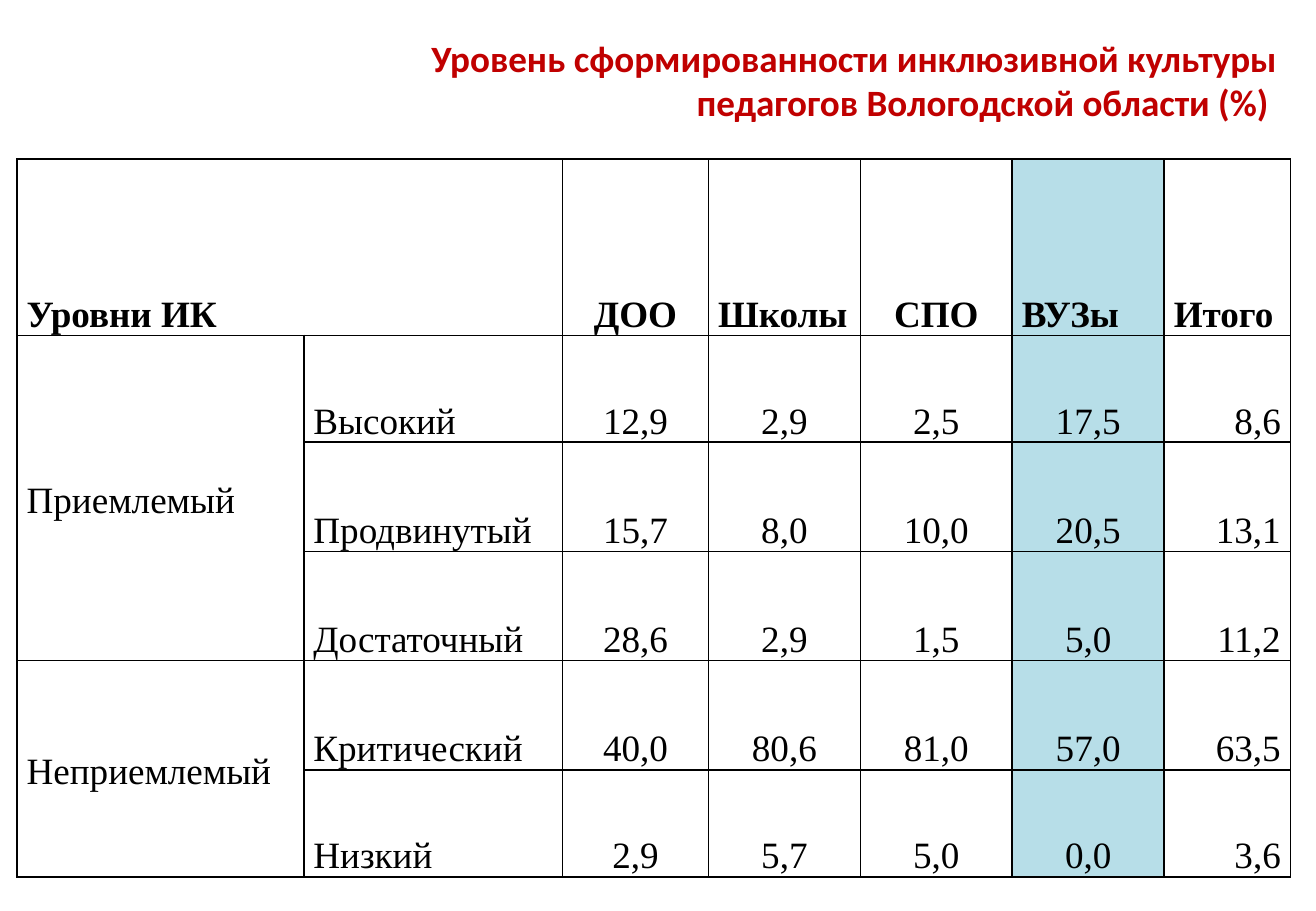
"""Builds a slide with a table of inclusive culture levels among teachers."""
from dataclasses import dataclass

from lxml.etree import SubElement
from pptx import Presentation
from pptx.dml.color import RGBColor
from pptx.enum.text import MSO_ANCHOR as Anchor, MSO_AUTO_SIZE as AutoSize, PP_ALIGN as Align
from pptx.oxml.ns import qn
from pptx.table import Table, _Cell as Cell
from pptx.text.text import TextFrame
from pptx.util import Emu, Pt

EMU_PER_PX = 9144
BLACK, RED, BLUE = "000000", "C00000", "B7DEE8"
BORDER_SIDES = ("a:lnL", "a:lnR", "a:lnT", "a:lnB")


@dataclass(frozen=True)
class Column:
    heading: str
    width: int
    heading_align: Align = Align.LEFT
    body_align: Align = Align.CENTER
    fill: str | None = None


@dataclass(frozen=True)
class Row:
    height: int
    texts: tuple[str, ...]


@dataclass(frozen=True)
class Span:
    row: int
    column: int
    last_row: int
    last_column: int


COLUMNS = (
    Column("Уровни ИК", 236, body_align=Align.LEFT),
    Column("", 213, body_align=Align.LEFT),
    Column("ДОО", 120, Align.CENTER),
    Column("Школы", 125),
    Column("СПО", 125, Align.CENTER),
    Column("ВУЗы", 125, fill=BLUE),
    Column("Итого", 104, body_align=Align.RIGHT),
)
ROWS = (
    Row(145, tuple(column.heading for column in COLUMNS)),
    Row(88, ("Приемлемый", "Высокий", "12,9", "2,9", "2,5", "17,5", "8,6")),
    Row(90, ("", "Продвинутый", "15,7", "8,0", "10,0", "20,5", "13,1")),
    Row(90, ("", "Достаточный", "28,6", "2,9", "1,5", "5,0", "11,2")),
    Row(90, ("Неприемлемый", "Критический", "40,0", "80,6", "81,0", "57,0", "63,5")),
    Row(88, ("", "Низкий", "2,9", "5,7", "5,0", "0,0", "3,6")),
)
SPANS = (Span(0, 0, 0, 1), Span(1, 0, 3, 0), Span(4, 0, 5, 0))


def px(length: int) -> Emu:
    """Turn whole pixels into EMU."""
    return Emu(length * EMU_PER_PX)


def rgb(value: str) -> RGBColor:
    """Turn a hex string into a colour."""
    return RGBColor.from_string(value)


def write(frame: TextFrame, text: str, align: Align, font_name: str, color: str, bold: bool) -> None:
    """Set one aligned paragraph and format its run."""
    frame.text = text
    paragraph = frame.paragraphs[0]
    paragraph.alignment = align
    for font in (paragraph.font, *(run.font for run in paragraph.runs)):
        font.name, font.size, font.bold = font_name, Pt(22), bold
        font.color.rgb = rgb(color)


def add_borders(cell: Cell) -> None:
    """Give a cell thin black lines on all sides."""
    properties = cell._tc.get_or_add_tcPr()
    for side in BORDER_SIDES:
        line = SubElement(properties, qn(side), w=str(Pt(1)))
        SubElement(SubElement(line, qn("a:solidFill")), qn("a:srgbClr"), val=BLACK)


def draw_cell(cell: Cell, text: str, column: Column, is_heading: bool, anchor: Anchor) -> None:
    """Write, align, border and fill one table cell."""
    align = column.heading_align if is_heading else column.body_align
    write(cell.text_frame, text, align, "Times New Roman", BLACK, is_heading)
    cell.text_frame.paragraphs[0].line_spacing = 1.15
    cell.vertical_anchor = anchor
    cell.margin_left = cell.margin_right = px(8)
    cell.margin_top = cell.margin_bottom = 0
    add_borders(cell)
    if column.fill:
        cell.fill.solid()
        cell.fill.fore_color.rgb = rgb(column.fill)
    else:
        cell.fill.background()


def draw_table(table: Table) -> None:
    """Size the grid, draw its cells and merge the spans."""
    table.first_row = table.horz_banding = False
    for index, column in enumerate(COLUMNS):
        table.columns[index].width = px(column.width)
    for row_index, row in enumerate(ROWS):
        table.rows[row_index].height = px(row.height)
        for index, (text, column) in enumerate(zip(row.texts, COLUMNS)):
            is_group = row_index > 0 and index == 0
            anchor = Anchor.MIDDLE if is_group else Anchor.BOTTOM
            draw_cell(table.cell(row_index, index), text, column, row_index == 0, anchor)
    for span in SPANS:
        table.cell(span.row, span.column).merge(table.cell(span.last_row, span.last_column))


def main() -> None:
    """Build and save the slide."""
    presentation = Presentation()
    presentation.slide_width, presentation.slide_height = px(1083), px(750)
    slide = presentation.slides.add_slide(presentation.slide_layouts[5])
    title = slide.shapes.title
    title.left, title.top, title.width, title.height = px(321), px(21), px(740), px(89)
    write(title.text_frame, "Уровень сформированности инклюзивной культуры педагогов Вологодской области (%) ",
          Align.RIGHT, "Calibri", RED, True)
    title.text_frame.vertical_anchor = Anchor.MIDDLE
    title.text_frame.auto_size = AutoSize.NONE
    width = sum(column.width for column in COLUMNS)
    height = sum(row.height for row in ROWS)
    frame = slide.shapes.add_table(len(ROWS), len(COLUMNS), px(14), px(131), px(width), px(height))
    draw_table(frame.table)
    presentation.save("out.pptx")


if __name__ == "__main__":
    main()
